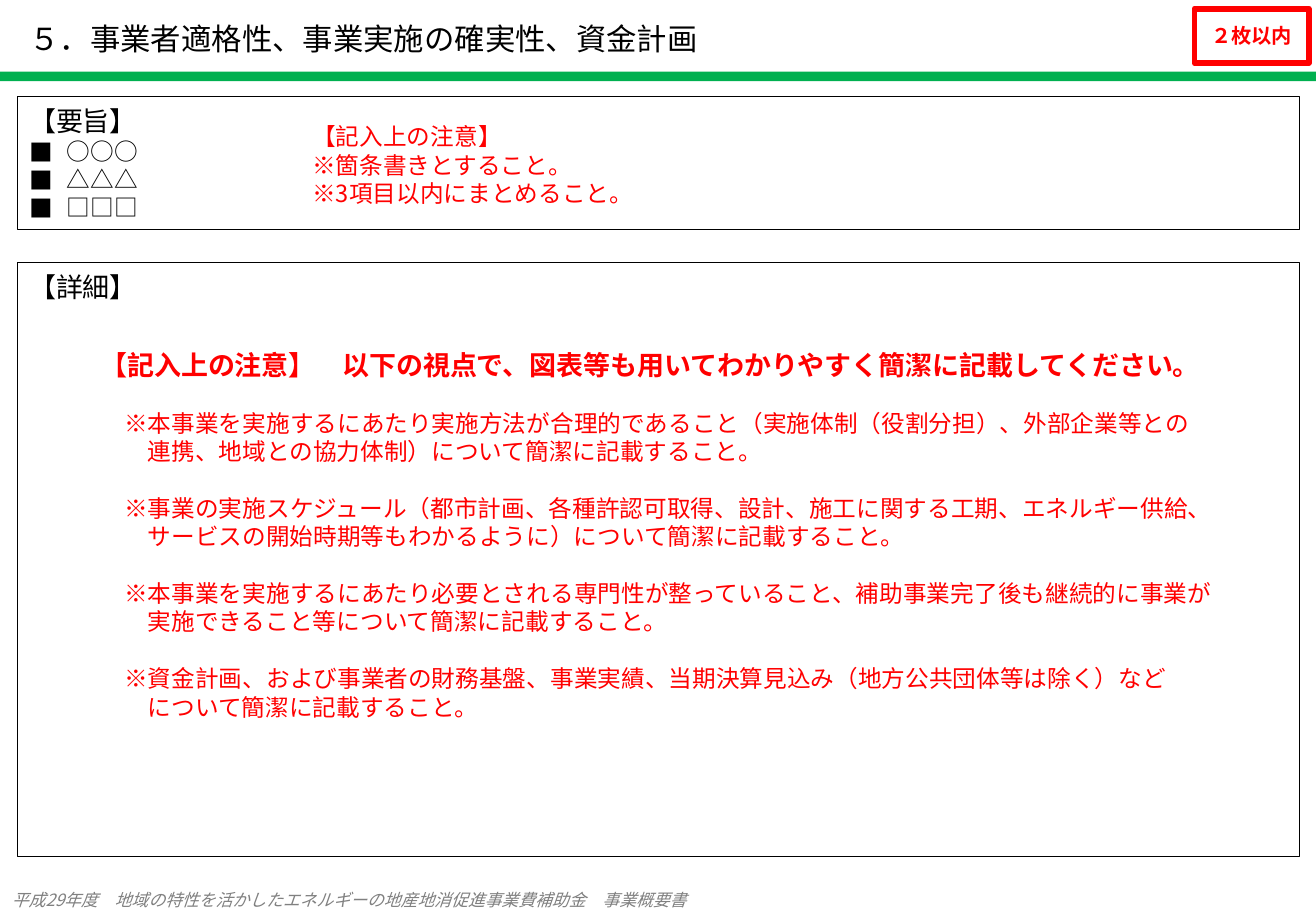
"""Build the slide on operator fitness, project certainty and funding."""
import pptx
import pptx.util
import pptx.dml.color
import pptx.enum.shapes
import pptx.enum.text
import pptx.oxml
import pptx.oxml.ns
from pptx.util import Cm, Pt

ALIGN = pptx.enum.text.PP_ALIGN
ANCHOR = pptx.enum.text.MSO_ANCHOR


class Sheet:
    """Hold the style and the current slide."""

    face = "Noto Sans CJK JP"
    hues = {"ink": "000000", "paper": "FFFFFF", "note": "FF0000",
            "bar": "00B050", "foot": "808080"}

    def __init__(self, deck):
        """Add a title-only slide to the deck."""
        self.slide = deck.slides.add_slide(deck.slide_layouts[5])

    def hue(self, name):
        """Return a named colour."""
        return pptx.dml.color.RGBColor.from_string(self.hues[name])

    def style(self, para, size, hue="ink", bold=False, italic=False):
        """Set the font of a paragraph."""
        font = para.font
        font.name, font.size = self.face, Pt(size)
        font.bold, font.italic = bold, italic
        font.color.rgb = self.hue(hue)
        tag = pptx.oxml.ns.qn("a:ea")
        east = font._element.makeelement(tag, {"typeface": self.face})
        font._element.append(east)

    def frame(self, shape, anchor=ANCHOR.TOP):
        """Prepare the text frame of a shape."""
        frame = shape.text_frame
        frame.word_wrap = True
        frame.auto_size = pptx.enum.text.MSO_AUTO_SIZE.NONE
        frame.vertical_anchor = anchor
        if anchor == ANCHOR.TOP:
            frame.margin_top = Cm(0.17)
        return frame

    def line(self, frame, text, size, hue="ink", bold=False,
             left=0, hang=0, gap=0, mark=None):
        """Add a left-aligned paragraph with fixed line pitch."""
        para = frame.paragraphs[-1]
        if para.text:
            para = frame.add_paragraph()
        para.text = text
        para.alignment = ALIGN.LEFT
        para.line_spacing, para.space_before = Pt(1.2 * size), Pt(gap)
        props = para._p.get_or_add_pPr()
        props.set("marL", str(Cm(left)))
        props.set("indent", str(-Cm(hang)))
        if mark:
            space = pptx.oxml.ns.nsdecls("a")
            for part in (f'<a:buFont {space} typeface="{self.face}"/>',
                         f'<a:buChar {space} char="{mark}"/>'):
                props.append(pptx.oxml.parse_xml(part))
        self.style(para, size, hue, bold)

    def label(self, shape, text, size, align=ALIGN.LEFT, **look):
        """Write one line in the middle of a shape's height."""
        para = self.frame(shape, ANCHOR.MIDDLE).paragraphs[0]
        para.text, para.alignment = text, align
        self.style(para, size, **look)

    def title(self, text, *place):
        """Fill the title placeholder."""
        shape = self.slide.shapes.title
        shape.left, shape.top, shape.width, shape.height = map(Cm, place)
        self.label(shape, text, 18)

    def box(self, *place, fill="paper", edge=None, width=0.25):
        """Add a rectangle."""
        kind = pptx.enum.shapes.MSO_SHAPE.RECTANGLE
        shape = self.slide.shapes.add_shape(kind, *map(Cm, place))
        shape.shadow.inherit = False
        shape.fill.solid()
        shape.fill.fore_color.rgb = self.hue(fill)
        if edge:
            shape.line.color.rgb = self.hue(edge)
            shape.line.width = Pt(width)
        else:
            shape.line.fill.background()
        return shape

    def text(self, *place):
        """Add a text box."""
        return self.slide.shapes.add_textbox(*map(Cm, place))


def main():
    """Draw the slide and save it."""
    deck = pptx.Presentation()
    deck.slide_width, deck.slide_height = Cm(27.51), Cm(19.05)
    sheet = Sheet(deck)

    foot = sheet.text(0, 18.59, 26.16, 0.46)
    sheet.label(foot, "平成29年度　地域の特性を活かしたエネルギーの地産地消促進事業費補助金　事業概要書",
                10, hue="foot", italic=True)
    sheet.box(0, 1.5, 27.51, 0.2, fill="bar")
    sheet.title("５．事業者適格性、事業実施の確実性、資金計画", 0.36, 0.1, 24.77, 1.4)

    detail = sheet.box(0.36, 5.49, 26.8, 12.42, edge="ink")
    sheet.line(sheet.frame(detail), "【詳細】", 16)

    guide = sheet.frame(sheet.text(1.85, 7.11, 23.8, 10))
    sheet.line(guide, "【記入上の注意】　以下の視点で、図表等も用いてわかりやすく簡潔に記載してください。",
               16, "note", True)
    for item in (
        "※本事業を実施するにあたり実施方法が合理的であること（実施体制（役割分担）、外部企業等との\v"
        "連携、地域との協力体制）について簡潔に記載すること。",
        "※事業の実施スケジュール（都市計画、各種許認可取得、設計、施工に関する工期、エネルギー供給、\v"
        "サービスの開始時期等もわかるように）について簡潔に記載すること。",
        "※本事業を実施するにあたり必要とされる専門性が整っていること、補助事業完了後も継続的に事業が\v"
        "実施できること等について簡潔に記載すること。",
        "※資金計画、および事業者の財務基盤、事業実績、当期決算見込み（地方公共団体等は除く）など\v"
        "について簡潔に記載すること。",
    ):
        sheet.line(guide, item, 14, "note", left=0.99, hang=0.49, gap=16.8)

    badge = sheet.box(24.97, 0.18, 2.39, 1.14, edge="note", width=3.5)
    sheet.label(badge, "２枚以内", 12, ALIGN.CENTER, hue="note", bold=True)

    brief = sheet.frame(sheet.box(0.36, 2.01, 26.8, 2.79, edge="ink"))
    sheet.line(brief, "【要旨】", 16)
    for item in ("○○○", "△△△", "□□□"):
        sheet.line(brief, item, 14, left=0.79, hang=0.79, mark="■")

    hint = sheet.frame(sheet.text(5.77, 2.39, 9.65, 2.06))
    for item in ("【記入上の注意】", "※箇条書きとすること。", "※3項目以内にまとめること。"):
        sheet.line(hint, item, 14, "note", left=0.51)

    deck.save("out.pptx")


if __name__ == "__main__":
    main()
